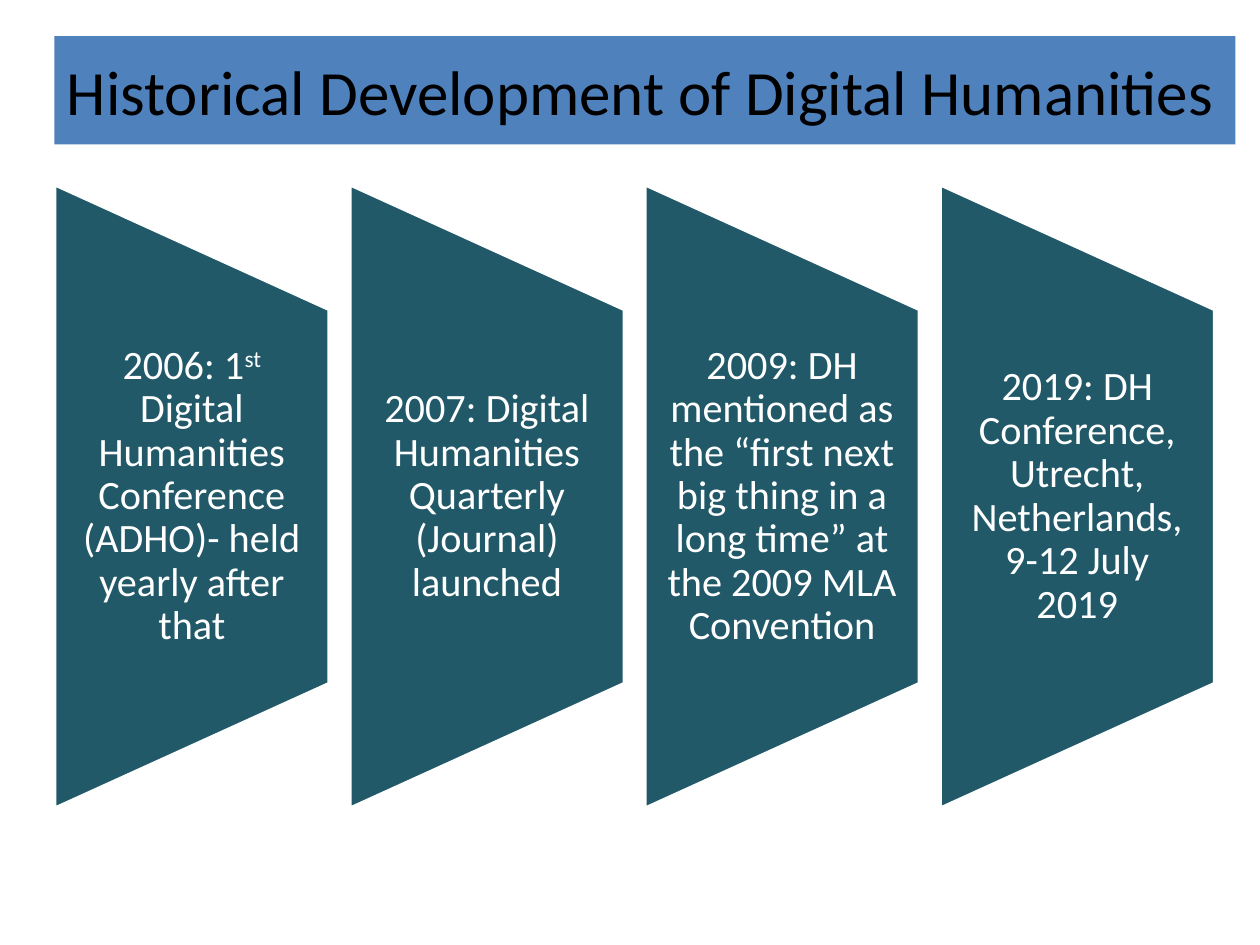
from pptx import Presentation
from pptx.dml.color import RGBColor
from pptx.enum.shapes import MSO_SHAPE as Shape
from pptx.enum.text import MSO_ANCHOR as Anchor, MSO_AUTO_SIZE as AutoSize, PP_ALIGN as Align
from pptx.util import Pt

COLORS = {"banner": "4F81BD", "panel": "215968", "white": "FFFFFF", "black": "000000"}
TITLE = "Historical Development of Digital Humanities"
MILESTONES = [
    [("2006: 1", False), ("st", True),
     (" Digital Humanities Conference (ADHO)- held yearly after that", False)],
    [("2007: Digital Humanities Quarterly (Journal) launched", False)],
    [("2009: DH mentioned as the “first next big thing in a long time” "
      "at the 2009 MLA Convention", False)],
    [("2019: DH Conference, Utrecht, Netherlands, 9-12 July 2019", False)],
]
FIRST_LEFT, PITCH, PANEL_WIDTH = 31.3, 168.65, 156.8
PANEL_HEIGHT, MIDDLE, TEXT_HEIGHT = 356.4, 283.7, 213.8
FRAME_FORMAT = {
    "word_wrap": True, "auto_size": AutoSize.NONE, "vertical_anchor": Anchor.MIDDLE,
}
CAPTION_INSETS = {
    "margin_left": Pt(11.5), "margin_right": Pt(11.5), "margin_top": 0, "margin_bottom": 0,
}


def apply_format(target, values):
    """Set every named attribute on the target."""
    for name, value in values.items():
        setattr(target, name, value)


def color(name):
    """Return the named palette colour."""
    return RGBColor.from_string(COLORS[name])


def fill_shape(shape, name):
    """Give the shape a solid palette fill."""
    shape.fill.solid()
    shape.fill.fore_color.rgb = color(name)


def format_font(font, size, name):
    """Set the typeface, size and colour of a font."""
    apply_format(font, {"name": "Calibri", "size": Pt(size)})
    font.color.rgb = color(name)


def add_title(slide):
    """Turn the title placeholder into the blue banner."""
    title = slide.shapes.title
    apply_format(title, {"left": Pt(31), "top": Pt(20.6), "width": Pt(674.9), "height": Pt(61.9)})
    fill_shape(title, "banner")
    apply_format(title.text_frame, FRAME_FORMAT)
    paragraph = title.text_frame.paragraphs[0]
    paragraph.alignment = Align.LEFT
    run = paragraph.add_run()
    run.text = TITLE
    format_font(run.font, 36, "black")


def add_panel(slide, left):
    """Draw one tapering panel, turned to point right."""
    panel = slide.shapes.add_shape(
        Shape.FLOWCHART_MANUAL_OPERATION,
        Pt(left + (PANEL_WIDTH - PANEL_HEIGHT) / 2), Pt(MIDDLE - PANEL_WIDTH / 2),
        Pt(PANEL_HEIGHT), Pt(PANEL_WIDTH))
    panel.rotation = 270
    panel.shadow.inherit = False
    fill_shape(panel, "panel")
    panel.line.color.rgb = color("white")
    panel.line.width = Pt(2)


def add_caption(slide, left, pieces):
    """Write the milestone text over its panel."""
    caption = slide.shapes.add_textbox(
        Pt(left), Pt(MIDDLE - TEXT_HEIGHT / 2), Pt(PANEL_WIDTH), Pt(TEXT_HEIGHT))
    apply_format(caption.text_frame, {**FRAME_FORMAT, **CAPTION_INSETS})
    paragraph = caption.text_frame.paragraphs[0]
    apply_format(paragraph, {"alignment": Align.CENTER, "line_spacing": 0.9})
    for text, raised in pieces:
        run = paragraph.add_run()
        run.text = text
        format_font(run.font, 23, "white")
        if raised:
            run._r.get_or_add_rPr().set("baseline", "30000")


def main():
    """Build the timeline slide and save it."""
    presentation = Presentation()
    apply_format(presentation, {"slide_width": Pt(720), "slide_height": Pt(540)})
    slide = presentation.slides.add_slide(presentation.slide_layouts[5])
    add_title(slide)
    for index, pieces in enumerate(MILESTONES):
        left = FIRST_LEFT + index * PITCH
        add_panel(slide, left)
        add_caption(slide, left, pieces)
    presentation.save("out.pptx")


if __name__ == "__main__":
    main()
